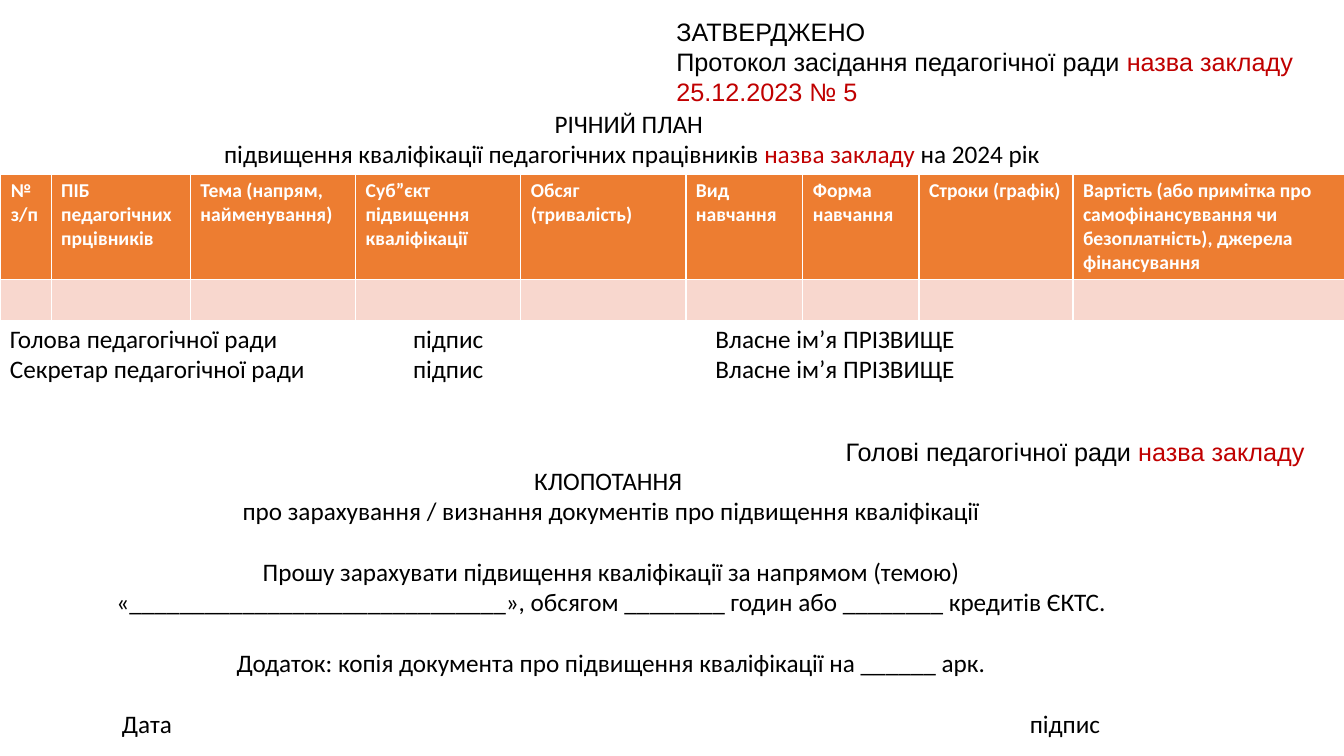
import pptx
import pptx.util
import pptx.dml.color
import pptx.enum.text
import pptx.oxml

Pt = pptx.util.Pt
ALIGN = pptx.enum.text.PP_ALIGN
BLACK, RED, WHITE = "000000", "C00000", "FFFFFF"
ORANGE, PINK = "ED7D31", "F8D7CE"
SIZE = 18
LINE = 22

school = ("назва закладу", RED)
grant = [
    [("ЗАТВЕРДЖЕНО", BLACK)],
    [("Протокол засідання педагогічної ради ", BLACK), school],
    [("25.12.2023 № 5", RED)],
]
title = [
    [("РІЧНИЙ ПЛАН ", BLACK)],
    [("підвищення кваліфікації педагогічних працівників ", BLACK),
     ("назва закладу ", RED), ("на 2024 рік", BLACK)],
]
heads = [
    ("№ з/п", 36),
    ("ПІБ педагогічних прцівників", 99.5),
    ("Тема (напрям, найменування)", 118),
    ("Суб”єкт підвищення кваліфікації", 118),
    ("Обсяг (тривалість)", 118),
    ("Вид навчання", 83.5),
    ("Форма навчання", 83),
    ("Строки (графік)", 110),
    ("Вартість (або примітка про самофінансуввання чи безоплатність), "
     "джерела фінансування", 194),
]
rows = [74, 29.5]
signs = [
    [(f"{role} педагогічної ради\tпідпис\tВласне ім’я ПРІЗВИЩЕ", BLACK)]
    for role in ("Голова", "Секретар")
]
chair = [[("Голові педагогічної ради ", BLACK), school]]
plea = [
    [("КЛОПОТАННЯ ", BLACK)],
    [("про зарахування / визнання документів про підвищення кваліфікації", BLACK)],
    [("Прошу зарахувати підвищення кваліфікації за напрямом (темою) "
      "«______________________________», обсягом ________ годин або "
      "________ кредитів ЄКТС.", BLACK)],
    [("Додаток: копія документа про підвищення кваліфікації на ______ арк.", BLACK)],
    [("\tДата\tпідпис", BLACK)],
]


def color(text):
    return pptx.dml.color.RGBColor.from_string(text)


def place(shape, left, top, width, height):
    shape.left, shape.top = Pt(left), Pt(top)
    shape.width, shape.height = Pt(width), Pt(height)


def tabs(para, stops):
    props = para._p.get_or_add_pPr()
    items = "".join(f'<a:tab pos="{Pt(stop)}" algn="l"/>' for stop in stops)
    space = "http://schemas.openxmlformats.org/drawingml/2006/main"
    props.append(pptx.oxml.parse_xml(f'<a:tabLst xmlns:a="{space}">{items}</a:tabLst>'))


def write(shape, lines, font="Calibri", align=ALIGN.LEFT, stops=(), wrap=True):
    frame = shape.text_frame
    frame.word_wrap = wrap
    frame.auto_size = pptx.enum.text.MSO_AUTO_SIZE.NONE
    frame.vertical_anchor = pptx.enum.text.MSO_ANCHOR.TOP
    for num, line in enumerate(lines):
        para = frame.add_paragraph() if num else frame.paragraphs[0]
        para.alignment = align
        if stops and "\t" in line[0][0]:
            para.alignment = ALIGN.LEFT
            tabs(para, stops)
        para.font.name, para.font.size = font, Pt(SIZE)
        same = len({tint for _, tint in line}) == 1
        if same:
            para.font.color.rgb = color(line[0][1])
        for text, tint in line:
            run = para.add_run()
            run.text = text
            if not same:
                run.font.color.rgb = color(tint)
    return frame


def main():
    deck = pptx.Presentation()
    deck.slide_width, deck.slide_height = Pt(960), Pt(540)
    slide = deck.slides.add_slide(deck.slide_layouts[5])

    def box(left, top, width, height, lines, **style):
        shape = slide.shapes.add_textbox(Pt(left), Pt(top), Pt(width), Pt(height))
        return write(shape, lines, **style)

    box(476, 8, 480, 73, grant, font="Arial")

    head = slide.shapes.title
    place(head, 4.5, 73.5, 893.5, 51)
    write(head, title, align=ALIGN.CENTER)

    total = sum(width for _, width in heads)
    table = slide.shapes.add_table(
        len(rows), len(heads), Pt(0.5), Pt(124.5), Pt(total), Pt(sum(rows))).table
    for row, height in zip(table.rows, rows):
        row.height = Pt(height)
    for col, (text, width) in enumerate(heads):
        table.columns[col].width = Pt(width)
        for row, fill in enumerate((ORANGE, PINK)):
            cell = table.cell(row, col)
            cell.fill.solid()
            cell.fill.fore_color.rgb = color(fill)
        cell = table.cell(0, col)
        cell.text = text
        font = cell.text_frame.paragraphs[0].font
        font.name, font.size, font.bold = "Calibri", Pt(14), True
        font.color.rgb = color(WHITE)

    box(0, 227.5, 952, 51, signs, stops=(288, 504))
    box(597, 308, 345.5, 29, chair, font="Arial", wrap=False)
    frame = box(50.5, 328.5, 772, 204, plea, align=ALIGN.CENTER, stops=(29.5, 678))
    for para in frame.paragraphs[2:]:
        para.space_before = Pt(LINE)

    deck.save("out.pptx")


if __name__ == "__main__":
    main()
